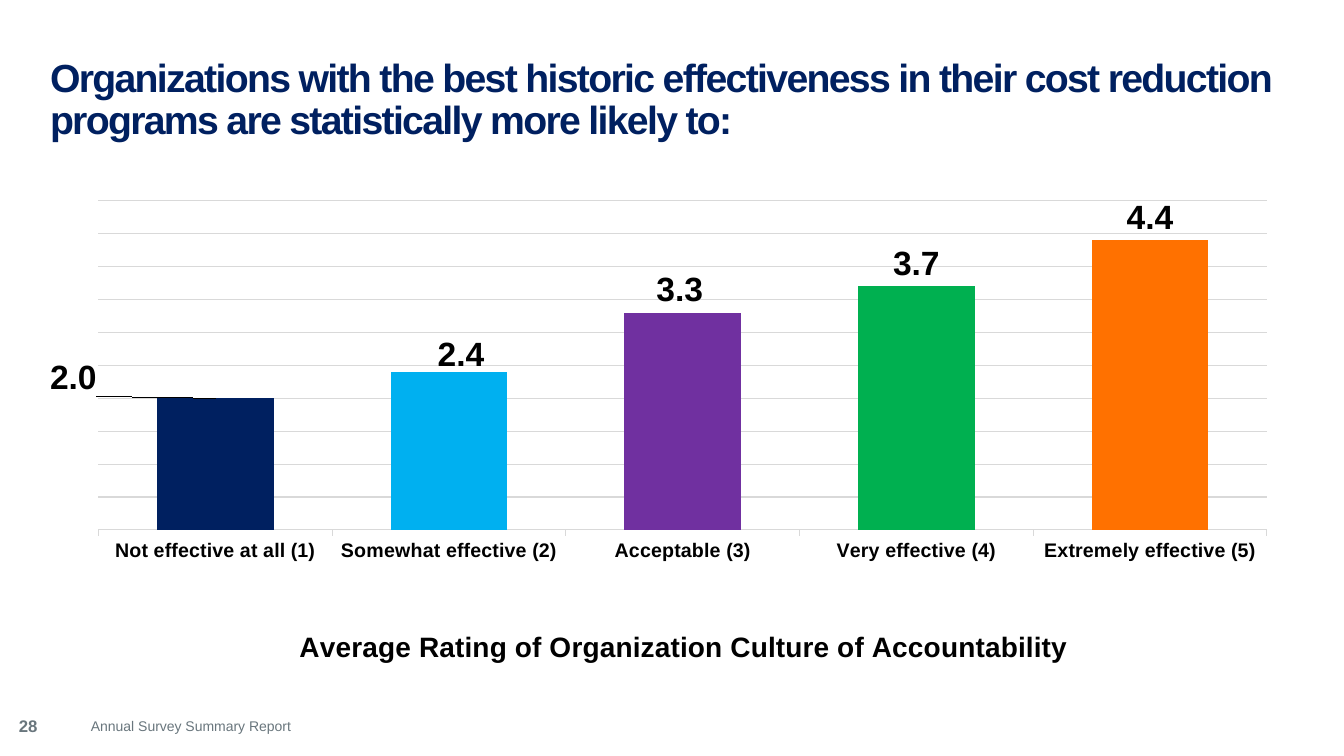
"""Build the slide on cost reduction effectiveness and culture of accountability."""
from lxml import etree
from pptx import Presentation
from pptx.chart.data import CategoryChartData
from pptx.dml.color import RGBColor
from pptx.enum.chart import XL_CHART_TYPE, XL_LABEL_POSITION, XL_TICK_LABEL_POSITION, XL_TICK_MARK
from pptx.enum.text import MSO_ANCHOR, MSO_AUTO_SIZE, PP_ALIGN
from pptx.oxml.ns import qn
from pptx.util import Pt

PX = 914400 / 100.8
FONT = "Arial"
COLUMN = XL_CHART_TYPE.COLUMN_CLUSTERED
OUTSIDE_END = XL_LABEL_POSITION.OUTSIDE_END
TICK_OUTSIDE = XL_TICK_MARK.OUTSIDE
LABELS_LOW = XL_TICK_LABEL_POSITION.LOW
MIDDLE = MSO_ANCHOR.MIDDLE
NO_AUTOFIT = MSO_AUTO_SIZE.NONE
LEFT = PP_ALIGN.LEFT

NAVY = RGBColor(0x00, 0x20, 0x60)
SKY = RGBColor(0x00, 0xB0, 0xF0)
PURPLE = RGBColor(0x70, 0x30, 0xA0)
GREEN = RGBColor(0x00, 0xB0, 0x50)
ORANGE = RGBColor(0xFF, 0x71, 0x00)
BLACK = RGBColor(0x00, 0x00, 0x00)
GRAY = RGBColor(0x69, 0x76, 0x7D)
GRID = RGBColor(0xD9, 0xD9, 0xD9)

CHART_WIDTH, CHART_HEIGHT = 1233, 593


def style_font(font, size, color, bold):
    font.name = FONT
    font.size = Pt(size)
    font.color.rgb = color
    font.bold = bold


def make_layout(left, top, width=None, height=None, mode="edge"):
    layout = etree.Element(qn("c:layout"))
    manual = etree.SubElement(layout, qn("c:manualLayout"))
    settings = []
    if width:
        settings.append(("layoutTarget", "inner"))
    if mode == "edge":
        settings += [("xMode", "edge"), ("yMode", "edge")]
    settings += [("x", left / CHART_WIDTH), ("y", top / CHART_HEIGHT)]
    if width:
        settings += [("w", width / CHART_WIDTH), ("h", height / CHART_HEIGHT)]
    for tag, value in settings:
        etree.SubElement(manual, qn(f"c:{tag}")).set("val", str(value))
    return layout


presentation = Presentation()
presentation.slide_width = round(1344 * PX)
presentation.slide_height = round(756 * PX)
slide = presentation.slides.add_slide(presentation.slide_layouts[5])

title = slide.shapes.title
title.left, title.top, title.width, title.height = (round(n * PX) for n in (50, 50, 1240, 101))
title_frame = title.text_frame
title_frame.text = (
    "Organizations with the best historic effectiveness in their cost reduction "
    "programs are statistically more likely to:"
)
title_frame.word_wrap = True
title_frame.auto_size = NO_AUTOFIT
title_frame.vertical_anchor = MIDDLE
title_frame.margin_left = title_frame.margin_right = 0
title_frame.margin_top = title_frame.margin_bottom = 0
title_paragraph = title_frame.paragraphs[0]
title_paragraph.alignment = LEFT
title_paragraph.line_spacing = 0.9
title_run = title_paragraph.runs[0]
style_font(title_run.font, 28, NAVY, True)
title_run.font._element.set("spc", "-120")

ratings = [
    ("Not effective at all (1)", 2.0, NAVY, (-142, 2)),
    ("Somewhat effective (2)", 2.4, SKY, (12, 6)),
    ("Acceptable (3)", 3.3, PURPLE, (-3, 0)),
    ("Very effective (4)", 3.7, GREEN, None),
    ("Extremely effective (5)", 4.4, ORANGE, None),
]
chart_data = CategoryChartData(number_format="#,##0.0")
chart_data.categories = [name for name, *_ in ratings]
chart_data.add_series("Series 1", [value for _, value, *_ in ratings])
chart_frame = slide.shapes.add_chart(
    COLUMN, *(round(n * PX) for n in (50, 164, CHART_WIDTH, CHART_HEIGHT)), chart_data
)
chart = chart_frame.chart
chart.has_legend = False
chart.has_title = False
style_font(chart.font, 10, BLACK, False)

plot = chart.plots[0]
plot.gap_width = 100
plot.vary_by_categories = False
series = plot.series[0]
series.format.fill.solid()
series.format.fill.fore_color.rgb = GREEN
labels = series.data_labels
labels.show_value = True
labels.number_format = "#,##0.0"
labels.number_format_is_linked = False
labels.position = OUTSIDE_END
style_font(labels.font, 24, BLACK, True)

for index, (_, _, color, offset) in enumerate(ratings):
    point = series.points[index]
    point.format.fill.solid()
    point.format.fill.fore_color.rgb = color
    if offset:
        style_font(point.data_label.font, 24, BLACK, True)
        point.data_label.position = OUTSIDE_END
        label_index = series._element.xpath(f".//c:dLbl/c:idx[@val='{index}']")[0]
        label_index.addnext(make_layout(*offset, mode="factor"))

value_axis = chart.value_axis
value_axis.minimum_scale = 0
value_axis.maximum_scale = 5
value_axis.major_unit = 0.5
value_axis.visible = False
value_axis.has_major_gridlines = True

category_axis = chart.category_axis
category_axis.major_tick_mark = TICK_OUTSIDE
category_axis.tick_label_position = LABELS_LOW
style_font(category_axis.tick_labels.font, 14, BLACK, True)
for line in (value_axis.major_gridlines.format.line, category_axis.format.line):
    line.color.rgb = GRID
    line.width = Pt(0.75)

axis_title = category_axis.axis_title
axis_title.text_frame.text = "Average Rating of Organization Culture of Accountability"
style_font(axis_title.text_frame.paragraphs[0].runs[0].font, 20, BLACK, True)
for old_layout in axis_title._element.findall(qn("c:layout")):
    axis_title._element.remove(old_layout)
axis_title._element.find(qn("c:tx")).addnext(make_layout(244, 460))

plot_area = plot._element.getparent()
for old_layout in plot_area.findall(qn("c:layout")):
    plot_area.remove(old_layout)
plot_area.insert(0, make_layout(48, 37, 1169, 329))

footers = [
    ("28", (9, 711, 45, 30), 12, True),
    ("Annual Survey Summary Report", (81, 713, 983, 27), 10, False),
]
for text, box, size, bold in footers:
    footer = slide.shapes.add_textbox(*(round(n * PX) for n in box))
    footer.text_frame.word_wrap = True
    footer.text_frame.text = text
    style_font(footer.text_frame.paragraphs[0].runs[0].font, size, GRAY, bold)

presentation.save("out.pptx")
